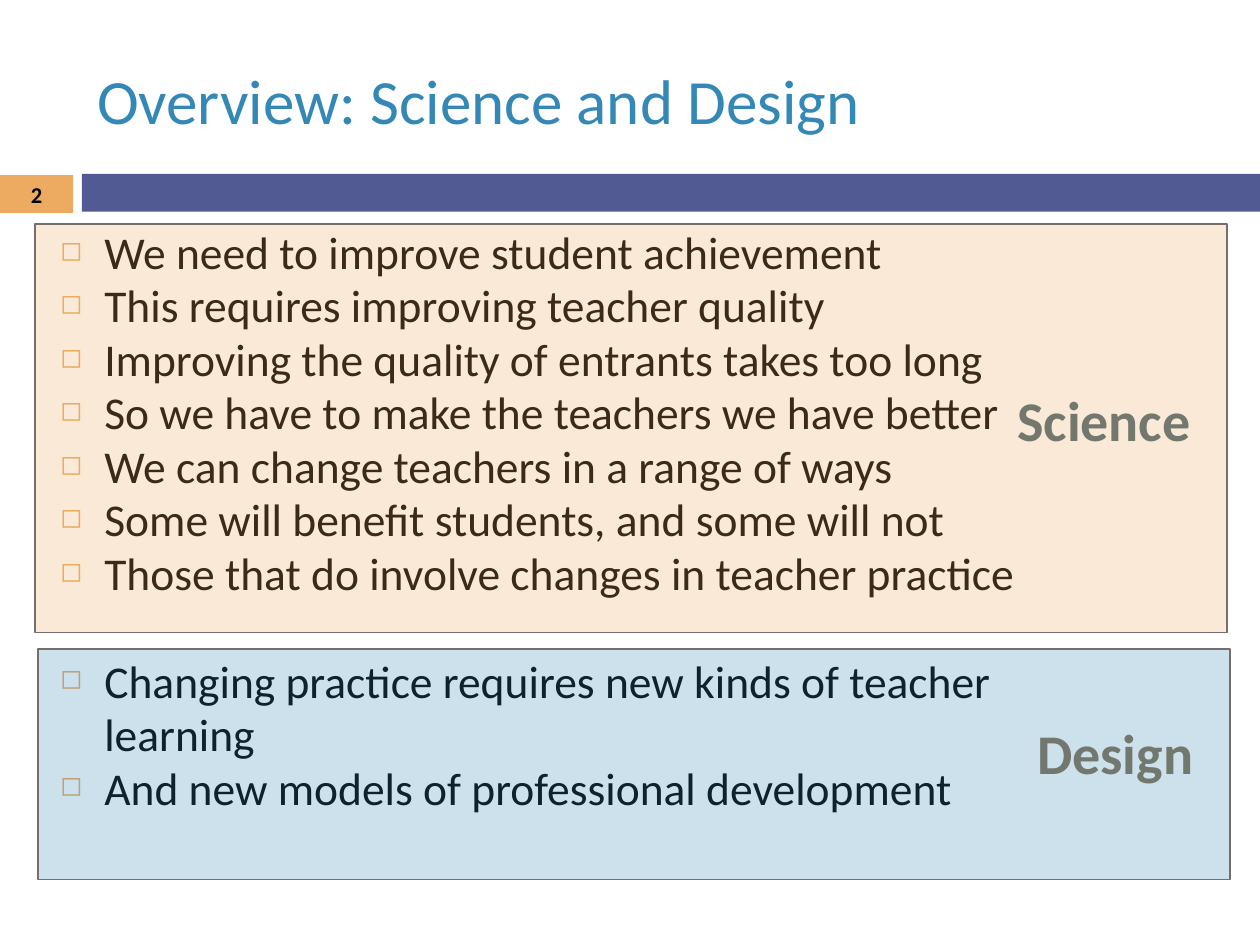
from lxml import etree
from pptx import Presentation
from pptx.dml.color import RGBColor
from pptx.enum.shapes import MSO_SHAPE
from pptx.enum.text import MSO_ANCHOR, PP_ALIGN
from pptx.oxml.ns import qn
from pptx.util import Inches, Pt

RECTANGLE = MSO_SHAPE.RECTANGLE
TOP, MIDDLE = MSO_ANCHOR.TOP, MSO_ANCHOR.MIDDLE
LEFT, CENTER, RIGHT = PP_ALIGN.LEFT, PP_ALIGN.CENTER, PP_ALIGN.RIGHT

INDIGO = RGBColor(0x52, 0x5A, 0x93)
BLUE = RGBColor(0x34, 0x88, 0xB6)
ORANGE = RGBColor(0xED, 0xAA, 0x61)
GREY = RGBColor(0x73, 0x78, 0x6E)
BORDER = RGBColor(0x78, 0x6E, 0x69)
BLACK = RGBColor(0, 0, 0)

FONT = "Calibri"
LINE_SPACING = 0.98
GROUP_GAP = Pt(31)

SCIENCE_POINTS = [
    "We need to improve student achievement",
    "This requires improving teacher quality",
    "Improving the quality of entrants takes too long",
    "So we have to make the teachers we have better",
    "We can change teachers in a range of ways",
    "Some will benefit students, and some will not",
    "Those that do involve changes in teacher practice",
]
DESIGN_POINTS = [
    "Changing practice requires new kinds of teacher learning",
    "And new models of professional development",
]


def write(para, text, size, color, bold=False, align=LEFT):
    para.alignment = align
    span = para.add_run()
    span.text = text
    span.font.name = FONT
    span.font.size = Pt(size)
    span.font.bold = bold
    span.font.color.rgb = color


def prepare_frame(shape, anchor=TOP):
    frame = shape.text_frame
    frame.word_wrap = True
    frame.vertical_anchor = anchor
    return frame


def add_rectangle(page, box, fill, alpha=None, border=None):
    shape = page.shapes.add_shape(RECTANGLE, *map(Inches, box))
    shape.shadow.inherit = False
    shape.fill.solid()
    shape.fill.fore_color.rgb = fill
    if alpha is not None:
        color = shape._element.spPr.find(qn("a:solidFill"))[0]
        etree.SubElement(color, qn("a:alpha"), val=str(alpha * 1000))
    if border is None:
        shape.line.fill.background()
    else:
        shape.line.color.rgb = border
        shape.line.width = Pt(1)
    return shape


def add_bullet(para):
    properties = para._p.get_or_add_pPr()
    indent = Inches(0.35)
    properties.set("marL", str(indent))
    properties.set("indent", str(-indent))
    color = etree.SubElement(properties, qn("a:buClr"))
    etree.SubElement(color, qn("a:srgbClr"), val=str(ORANGE))
    etree.SubElement(properties, qn("a:buSzPct"), val="60000")
    etree.SubElement(properties, qn("a:buChar"), char="◻")


def place_title(page, box):
    title = page.shapes.title
    title.left, title.top, title.width, title.height = map(Inches, box)
    frame = prepare_frame(title, MIDDLE)
    write(frame.paragraphs[0], "Overview: Science and Design", 36, BLUE)


def place_header_band(page, top, height):
    add_rectangle(page, (0.65, top, 9.35, height), INDIGO)
    number = add_rectangle(page, (0, top + 0.01, 0.58, height), ORANGE)
    para = prepare_frame(number, MIDDLE).paragraphs[0]
    write(para, "2", 12.9, BLACK, bold=True, align=CENTER)


def place_points(page, box, groups):
    frame = prepare_frame(page.shapes.add_textbox(*map(Inches, box)))
    para = None
    for group in groups:
        for position, point in enumerate(group):
            first = para is None
            para = frame.paragraphs[0] if first else frame.add_paragraph()
            para.line_spacing = LINE_SPACING
            # A blank line's height separates the groups
            para.space_before = GROUP_GAP if position == 0 and not first else Pt(0)
            add_bullet(para)
            write(para, point, 26, BLACK)


def place_panel(page, box, tint, label, label_top):
    left, top, width, height = box
    add_rectangle(page, box, tint, alpha=25, border=BORDER)
    label_width = 1.87
    label_left = left + width - 0.19 - label_width
    label_box = (label_left, label_top, label_width, 0.64)
    caption = page.shapes.add_textbox(*map(Inches, label_box))
    para = prepare_frame(caption).paragraphs[0]
    write(para, label, 32, GREY, bold=True, align=RIGHT)


def main():
    deck = Presentation()
    deck.slide_width, deck.slide_height = Inches(10), Inches(7.5)
    page = deck.slides.add_slide(deck.slide_layouts[5])

    # Heading
    place_title(page, (0.67, 0.25, 8.92, 1.08))
    place_header_band(page, 1.38, 0.3)

    # Points, tinted by the translucent panels above them
    place_points(page, (0.38, 1.75, 8.54, 4.95), [SCIENCE_POINTS, DESIGN_POINTS])
    place_panel(page, (0.3, 5.15, 9.46, 1.83), BLUE, "Design", 5.65)
    place_panel(page, (0.28, 1.78, 9.46, 3.24), ORANGE, "Science", 3.01)

    deck.save("out.pptx")


if __name__ == "__main__":
    main()
